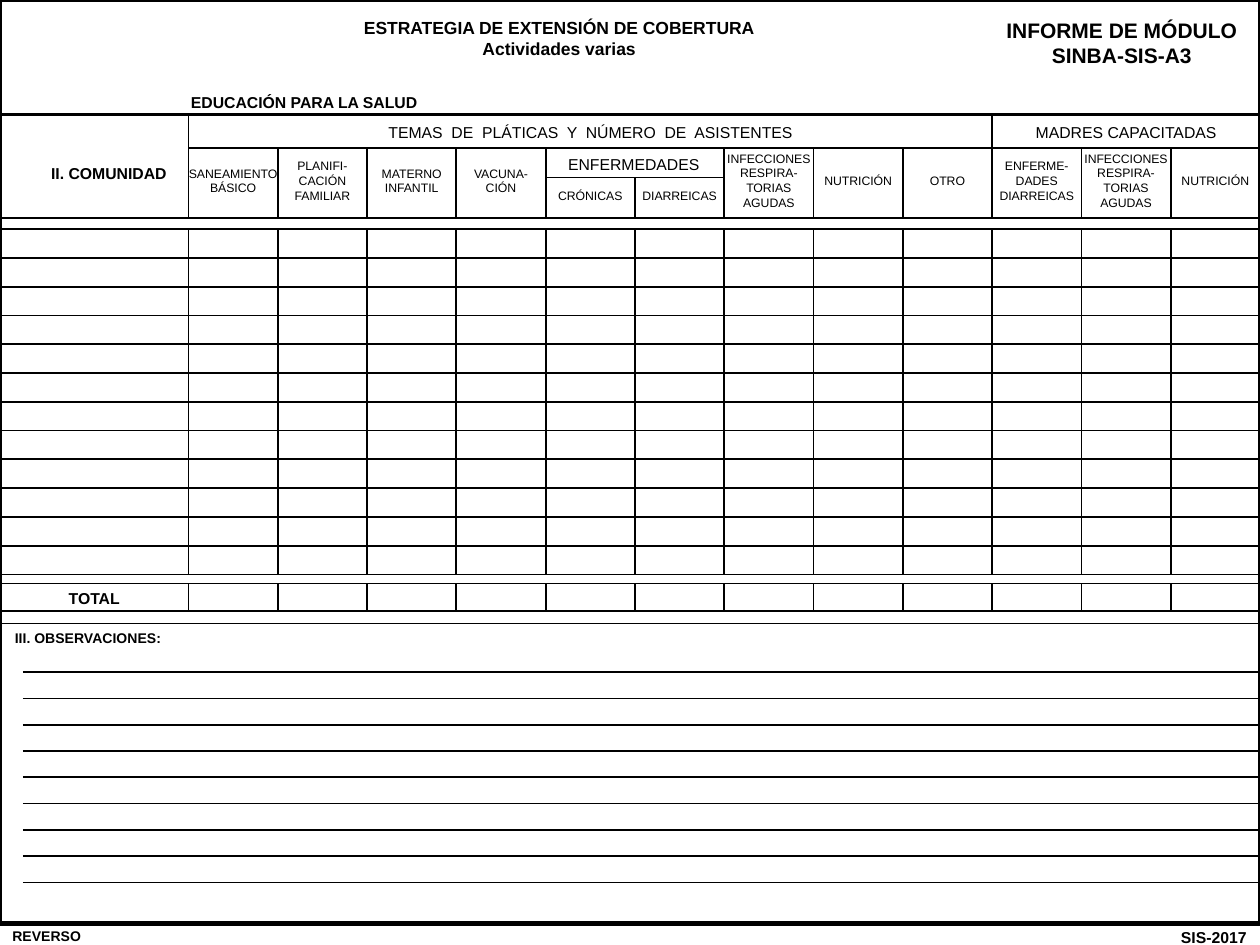
from dataclasses import dataclass

from lxml.etree import SubElement
from pptx import Presentation
from pptx.dml.color import RGBColor
from pptx.enum.shapes import MSO_CONNECTOR as CONNECTOR, MSO_SHAPE as SHAPE
from pptx.enum.text import MSO_AUTO_SIZE as AUTO_SIZE, PP_ALIGN as ALIGN
from pptx.oxml.ns import qn
from pptx.util import Cm, Pt


@dataclass(frozen=True)
class Theme:
    font: str = "Arial"
    ink: RGBColor = RGBColor(0, 0, 0)
    title: int = 12
    heading: int = 10
    body: int = 9
    note: int = 8
    label: int = 7
    thin: float = 1
    thick: float = 2
    frame: float = 2.5


THEME = Theme()
PAGE_W, PAGE_H = 25.4, 19.05

# Column edges: the community column ends where the first topic column starts
COL_X, COL_W = 3.8, 1.8
EDGES = [COL_X + COL_W * i for i in range(12)]
MOTHERS = 9  # first column of "MADRES CAPACITADAS"
CHRONIC, DIARRHEAL = 4, 5  # the columns under "ENFERMEDADES"

HEAD_TOP, TOPIC_TOP, DISEASE_BOTTOM, HEAD_BOTTOM = 2.31, 2.98, 3.58, 4.39
ROW_TOP, ROW_H, ROWS = 4.62, 0.58, 12
ROW_BOTTOM = ROW_TOP + ROW_H * ROWS
TOTAL_TOP, TOTAL_BOTTOM = 11.76, 12.32
NOTES_TOP = 12.57
NOTE_X, NOTE_Y, NOTE_GAP, NOTE_LINES = 0.46, 13.55, 0.53, 9

INFECTIONS = "INFECCIONES\nRESPIRA-\nTORIAS\nAGUDAS"
COLUMN_LABELS = [
    "SANEAMIENTO\nBÁSICO", "PLANIFI-\nCACIÓN\nFAMILIAR", "MATERNO\nINFANTIL",
    "VACUNA-\nCIÓN", "CRÓNICAS", "DIARREICAS", INFECTIONS, "NUTRICIÓN", "OTRO",
    "ENFERME-\nDADES\nDIARREICAS", INFECTIONS, "NUTRICIÓN",
]


def add_line(s, x1, y1, x2, y2, width=THEME.thin):
    line = s.shapes.add_connector(CONNECTOR.STRAIGHT, Cm(x1), Cm(y1), Cm(x2), Cm(y2))
    line.line.color.rgb = THEME.ink
    line.line.width = Pt(width)
    SubElement(line._element.spPr, qn("a:effectLst"))


def add_rule(s, y, x=0, width=THEME.thin):
    """Draw a horizontal line from x to the right edge of the page."""
    add_line(s, x, y, PAGE_W, y, width)


def add_text(s, text, x, y, w, h, size, bold=False, align=ALIGN.CENTER, wrap=True):
    """Add a text box with one paragraph per line of text."""
    tf = s.shapes.add_textbox(Cm(x), Cm(y), Cm(w), Cm(h)).text_frame
    tf.word_wrap = wrap
    tf.auto_size = AUTO_SIZE.SHAPE_TO_FIT_TEXT
    tf.text = text
    for p in tf.paragraphs:
        p.alignment = align
        p.font.name = THEME.font
        p.font.size = Pt(size)
        p.font.bold = bold
        p.font.color.rgb = THEME.ink


def add_column_label(s, text, column):
    """Centre a small label on its column, in a box wide enough for its longest line."""
    lines = text.split("\n")
    w = 0.62 + 0.17 * max(map(len, lines))
    h = 0.26 + 0.3 * len(lines)
    middle = 3.95 if column in (CHRONIC, DIARRHEAL) else 3.65
    x = EDGES[column] + (COL_W - w) / 2
    add_text(s, text, x, middle - h / 2, w, h, THEME.label, wrap=False)


def add_frame(s):
    sp = s.shapes.add_shape(SHAPE.RECTANGLE, 0, 0, Cm(PAGE_W), Cm(18.62))
    sp.shadow.inherit = False
    sp.fill.background()
    sp.line.color.rgb = THEME.ink
    sp.line.width = Pt(THEME.frame)


def add_titles(s):
    add_text(s, "INFORME DE MÓDULO\nSINBA-SIS-A3", 19.63, 0.23, 5.97, 1.27,
             THEME.title, bold=True)
    add_text(s, "ESTRATEGIA DE EXTENSIÓN DE COBERTURA\nActividades varias",
             2.62, 0.21, 17.3, 1.1, THEME.heading, bold=True)
    add_text(s, "EDUCACIÓN PARA LA SALUD", 3.6, 1.74, 5.16, 0.64,
             THEME.body, bold=True, align=ALIGN.LEFT, wrap=False)


def add_header(s):
    add_rule(s, HEAD_TOP, width=THEME.thick)
    add_rule(s, TOPIC_TOP, x=COL_X)
    add_rule(s, HEAD_BOTTOM)
    add_line(s, EDGES[CHRONIC], DISEASE_BOTTOM, EDGES[DIARRHEAL + 1], DISEASE_BOTTOM)
    tops = {0: HEAD_TOP, MOTHERS: HEAD_TOP, DIARRHEAL: DISEASE_BOTTOM}
    for i, x in enumerate(EDGES):
        add_line(s, x, tops.get(i, TOPIC_TOP), x, HEAD_BOTTOM)

    add_text(s, "II. COMUNIDAD", 0.58, 3.18, 3.23, 0.64, THEME.body, bold=True)
    add_text(s, "TEMAS  DE  PLÁTICAS  Y  NÚMERO  DE  ASISTENTES", COL_X, 2.36,
             EDGES[MOTHERS] - COL_X, 0.64, THEME.body)
    add_text(s, "MADRES CAPACITADAS", EDGES[MOTHERS], 2.36,
             PAGE_W - EDGES[MOTHERS], 0.64, THEME.body)
    add_text(s, "ENFERMEDADES", 11.15, 3, 3.25, 0.64, THEME.body, wrap=False)
    for i, text in enumerate(COLUMN_LABELS):
        add_column_label(s, text, i)


def add_grid(s):
    for i in range(ROWS + 1):
        add_rule(s, ROW_TOP + ROW_H * i)
    for y in (TOTAL_TOP, TOTAL_BOTTOM):
        add_rule(s, y)
    for x in EDGES:
        add_line(s, x, ROW_TOP, x, ROW_BOTTOM)
        add_line(s, x, TOTAL_TOP, x, TOTAL_BOTTOM)
    add_text(s, "TOTAL", 0, 11.74, COL_X, 0.64, THEME.body, bold=True)


def add_notes_area(s):
    add_rule(s, NOTES_TOP)
    add_text(s, "III. OBSERVACIONES:", 0.05, NOTES_TOP, 3.6, 0.58,
             THEME.note, bold=True, align=ALIGN.LEFT, wrap=False)
    for i in range(NOTE_LINES):
        add_rule(s, NOTE_Y + NOTE_GAP * i, x=NOTE_X)


def add_footer(s):
    add_text(s, "REVERSO", 0, 18.57, 2.24, 0.58, THEME.note, bold=True, align=ALIGN.LEFT)
    add_text(s, "SIS-2017", 22.81, 18.57, 2.57, 0.64, THEME.body, bold=True,
             align=ALIGN.RIGHT)


def main():
    prs = Presentation()
    prs.slide_width, prs.slide_height = Cm(PAGE_W), Cm(PAGE_H)
    s = prs.slides.add_slide(prs.slide_layouts[6])
    add_frame(s)
    add_titles(s)
    add_header(s)
    add_grid(s)
    add_notes_area(s)
    add_footer(s)
    prs.save("out.pptx")


if __name__ == "__main__":
    main()
